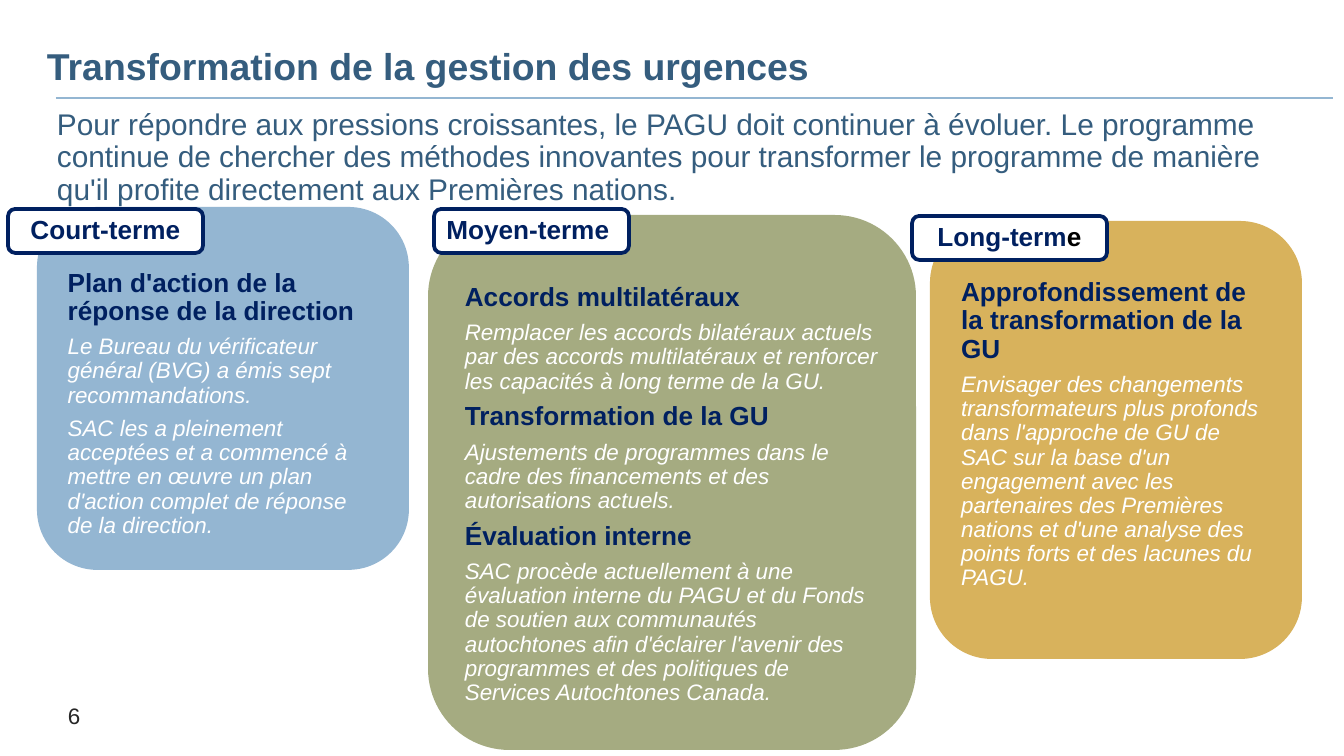
import pptx
import pptx.util
import pptx.dml.color
import pptx.enum.shapes
import pptx.enum.text
import lxml.etree

PX = 914400 / 134.4
NAVY, TEAL, BLUE, WHITE = "002060", "355D7E", "94B6D2", "FFFFFF"
SHAPE = pptx.enum.shapes.MSO_SHAPE.ROUNDED_RECTANGLE
ALIGN = pptx.enum.text.PP_ALIGN
ANCHOR = pptx.enum.text.MSO_ANCHOR

TITLE = "Transformation de la gestion des urgences"
INTRO = "Pour répondre aux pressions croissantes, le PAGU doit continuer à évoluer. Le programme continue de chercher des méthodes innovantes pour transformer le programme de manière qu'il profite directement aux Premières nations."
PAGE = "6"

HEAD = dict(size=14, color=NAVY, bold=True)
BODY = dict(size=12, color=WHITE, italic=True)

PANELS = [
    dict(box=(428, 215, 488, 535), fill="A5AB81", top=45, text=[
        (HEAD, "Accords multilatéraux"),
        (BODY, "Remplacer les accords bilatéraux actuels par des accords multilatéraux et renforcer les capacités à long terme de la GU."),
        (HEAD, "Transformation de la GU"),
        (BODY, "Ajustements de programmes dans le cadre des financements et des autorisations actuels."),
        (HEAD, "Évaluation interne"),
        (BODY, "SAC procède actuellement à une évaluation interne du PAGU et du Fonds de soutien aux communautés autochtones afin d'éclairer l'avenir des programmes et des politiques de Services Autochtones Canada."),
    ]),
    dict(box=(930, 221, 372, 438), fill="D8B25C", top=40, text=[
        (HEAD, "Approfondissement de la transformation de la GU"),
        (BODY, "Envisager des changements transformateurs plus profonds dans l'approche de GU de SAC sur la base d'un engagement avec les partenaires des Premières nations et d'une analyse des points forts et des lacunes du PAGU."),
    ]),
    dict(box=(37, 207, 372, 363), fill=BLUE, top=45, text=[
        (HEAD, "Plan d'action de la réponse de la direction"),
        (BODY, "Le Bureau du vérificateur général (BVG) a émis sept recommandations."),
        (BODY, "SAC les a pleinement acceptées et a commencé à mettre en œuvre un plan d'action complet de réponse de la direction."),
    ]),
]
TAG_SIZE = (195, 44)
TAGS = [
    (434, 209, [("Moyen-terme ", NAVY)]),
    (912, 216, [("Long-term", NAVY), ("e", "000000")]),
    (8, 209, [("Court-terme", NAVY)]),
]


def px(n):
    return pptx.util.Emu(round(n * PX))


def rgb(color):
    return pptx.dml.color.RGBColor.from_string(color)


def style(p, size, color=None, bold=False, italic=False, align=ALIGN.LEFT, spacing=0.9):
    p.alignment = align
    p.line_spacing = spacing
    p.space_before = pptx.util.Pt(0)
    p.space_after = pptx.util.Pt(5)
    f = p.font
    f.name, f.size, f.bold, f.italic = "Arial", pptx.util.Pt(size), bold, italic
    if color:
        f.color.rgb = rgb(color)


def margins(tf, left, top, right, bottom):
    tf.word_wrap = True
    tf.margin_left, tf.margin_top = px(left), px(top)
    tf.margin_right, tf.margin_bottom = px(right), px(bottom)


def add_text(s, box, text, inset=(13, 7, 13, 7), **look):
    tf = s.shapes.add_textbox(*map(px, box)).text_frame
    margins(tf, *inset)
    p = tf.paragraphs[0]
    p.text = text
    style(p, **look)


def add_round(s, box, fill, line=None):
    sp = s.shapes.add_shape(SHAPE, *map(px, box))
    sp.shadow.inherit = False
    sp.fill.solid()
    sp.fill.fore_color.rgb = rgb(fill)
    if line:
        sp.line.color.rgb = rgb(line)
        sp.line.width = pptx.util.Pt(2)
    else:
        sp.line.fill.background()
    return sp.text_frame


def add_panel(s, box, fill, top, text):
    tf = add_round(s, box, fill)
    tf.vertical_anchor = ANCHOR.TOP
    margins(tf, 13, top, 13, 7)
    for i, (look, words) in enumerate(text):
        p = tf.add_paragraph() if i else tf.paragraphs[0]
        p.text = words
        style(p, **look)


def add_tag(s, left, top, runs):
    tf = add_round(s, (left, top, *TAG_SIZE), WHITE, NAVY)
    tf.vertical_anchor = ANCHOR.MIDDLE
    margins(tf, 0, 0, 0, 0)
    p = tf.paragraphs[0]
    style(p, 14, bold=True, align=ALIGN.CENTER)
    for words, color in runs:
        r = p.add_run()
        r.text = words
        r.font.color.rgb = rgb(color)


def add_rule(s, left, right, y):
    c = s.shapes.add_connector(pptx.enum.shapes.MSO_CONNECTOR.STRAIGHT, px(left), px(y), px(right), px(y))
    c.line.color.rgb = rgb(BLUE)
    c.line.width = pptx.util.Pt(1.5)
    lxml.etree.SubElement(c._element.spPr, pptx.oxml.ns.qn("a:effectLst"))


def main():
    prs = pptx.Presentation()
    prs.slide_width, prs.slide_height = px(1344), px(756)
    s = prs.slides.add_slide(prs.slide_layouts[6])
    add_text(s, (11, 698, 126, 38), PAGE, size=12, color="262626", align=ALIGN.CENTER)
    add_rule(s, 56, 1333, 98)
    add_text(s, (47, 43, 1153, 34), TITLE, inset=(0, 0, 0, 0), size=20, color=TEAL,
             bold=True, spacing=pptx.util.Pt(24))
    add_text(s, (44, 103, 1255, 112), INTRO, size=16, color=TEAL)
    for panel in PANELS:
        add_panel(s, **panel)
    for tag in TAGS:
        add_tag(s, *tag)
    prs.save("out.pptx")


if __name__ == "__main__":
    main()
